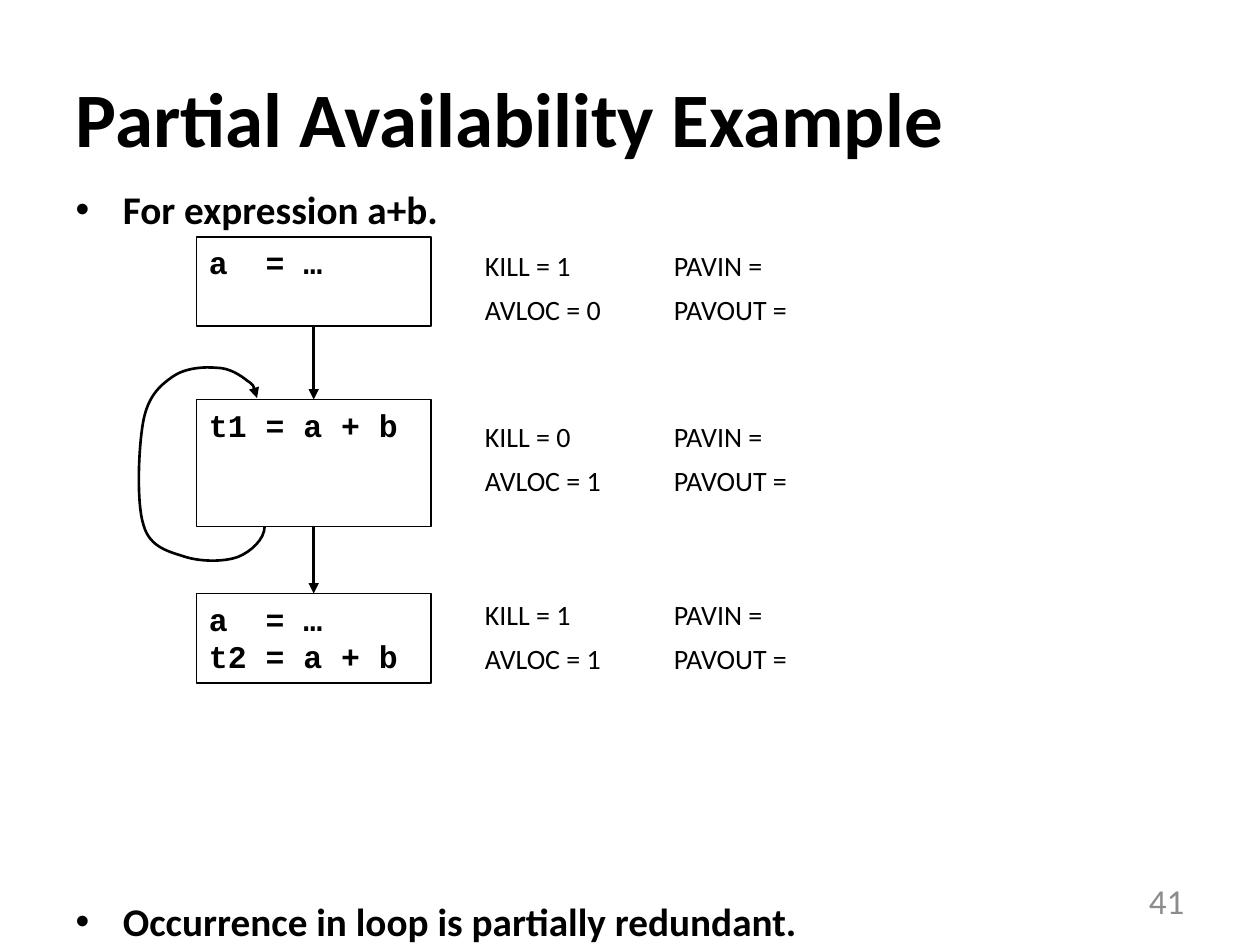
from lxml.etree import SubElement
from pptx import Presentation
from pptx.dml.color import RGBColor
from pptx.enum.shapes import MSO_CONNECTOR, MSO_SHAPE
from pptx.enum.text import MSO_ANCHOR, MSO_AUTO_SIZE, PP_ALIGN
from pptx.oxml.ns import qn
from pptx.util import Inches, Pt

BLACK, GREY = RGBColor(0, 0, 0), RGBColor(0x8C, 0x8C, 0x8C)
THEME = {
    "title": {"name": "Calibri", "size": Pt(44), "bold": True, "color": BLACK},
    "body": {"name": "Calibri", "size": Pt(22.4), "bold": True, "color": BLACK},
    "code": {"name": "Courier New", "size": Pt(18), "bold": True, "color": BLACK},
    "note": {"name": "Calibri", "size": Pt(16), "bold": False, "color": BLACK},
    "number": {"name": "Calibri", "size": Pt(20), "bold": False, "color": GREY},
}
BOX_LINE, ARROW_LINE = Pt(1), Pt(1.5)

deck = Presentation()
deck.slide_width, deck.slide_height = Inches(10), Inches(7.5)
page = deck.slides.add_slide(deck.slide_layouts[1])


def place(*shares):
    """Turn alternating x and y percentages of the slide into lengths."""
    sides = (deck.slide_width, deck.slide_height)
    return [int(sides[i % 2] * share / 100) for i, share in enumerate(shares)]


def write(box, lines, style, wrap=True, anchor=MSO_ANCHOR.TOP, **layout):
    """Fill a shape with one paragraph per line in a theme style."""
    frame = box.text_frame
    frame.auto_size = MSO_AUTO_SIZE.NONE
    frame.word_wrap, frame.vertical_anchor = wrap, anchor
    frame.text = "\n".join(lines)
    for para in frame.paragraphs:
        for name, value in {"alignment": PP_ALIGN.LEFT, **layout}.items():
            setattr(para, name, value)
        for span in para.runs:
            for name, value in THEME[style].items():
                if name == "color":
                    span.font.color.rgb = value
                else:
                    setattr(span.font, name, value)


# Title, bullets and page number
title, body = page.shapes.title, page.placeholders[1]
number = page.shapes.add_textbox(*place(71.7, 92.67, 23.3, 5.33))
for holder, area in ((title, (5, 4, 90, 16.67)), (body, (5, 18.93, 90.8, 70.4))):
    holder.left, holder.top, holder.width, holder.height = place(*area)
write(title, ["Partial Availability Example"], "title", anchor=MSO_ANCHOR.MIDDLE)
write(body, ["For expression a+b.", "Occurrence in loop is partially redundant."], "body")
body.text_frame.paragraphs[1].space_before = Pt(380)  # room for the flow graph
write(number, ["41"], "number", anchor=MSO_ANCHOR.MIDDLE, alignment=PP_ALIGN.RIGHT)

# Basic blocks: box top and height, code, top of the notes, KILL, AVLOC
BLOCKS = [
    (25.07, 9.47, ["a  = …"], 25.6, 1, 0),
    (42.27, 13.47, ["t1 = a + b"], 43.73, 0, 1),
    (62.8, 9.47, ["a  = …", "t2 = a + b"], 62.53, 1, 1),
]
boxes = []
for top, height, code, note_top, kill, avloc in BLOCKS:
    box = page.shapes.add_shape(MSO_SHAPE.RECTANGLE, *place(15.6, top, 18.6, height))
    box.shadow.inherit = False
    box.fill.background()
    box.line.color.rgb, box.line.width = BLACK, BOX_LINE
    write(box, code, "code")
    boxes.append(box)
    notes = ([f"KILL = {kill}", f"AVLOC = {avloc}"], ["PAVIN =", "PAVOUT ="])
    for left, lines in zip((37.5, 52.5), notes):
        note = page.shapes.add_textbox(*place(left, note_top, 11.5, 9.6))
        write(note, lines, "note", wrap=False, space_before=Pt(6))

# Arrows from each block to the next
arrows = []
for upper, lower in zip(boxes, boxes[1:]):
    arrow = page.shapes.add_connector(MSO_CONNECTOR.STRAIGHT, 0, 0, 0, 0)
    arrow.begin_connect(upper, 2)
    arrow.end_connect(lower, 0)
    SubElement(arrow._element.spPr, qn("a:effectLst"))
    arrows.append(arrow)

# Loop back to the middle block: a start, then three points per Bezier curve
LOOP = [
    (21, 55.73),
    (21, 57.07), (19.9, 58.4), (18.9, 58.93),
    (17.8, 59.47), (16, 59.47), (14.7, 58.93),
    (13.5, 58.4), (11.9, 58), (11.4, 55.6),
    (10.8, 53.2), (11, 47.07), (11.4, 44.4),
    (11.8, 41.87), (12.7, 40.8), (13.7, 39.87),
    (14.7, 38.93), (16.2, 38.8), (17.2, 38.93),
    (18.2, 38.93), (19.1, 39.73), (19.6, 40.27),
    (20.2, 40.8), (20.3, 41.47), (20.4, 42.13),
]
points = [place(*point) for point in LOOP]
builder = page.shapes.build_freeform(*points[0])
builder.add_line_segments(points[1:], close=False)
loop = builder.convert_to_shape()
loop.shadow.inherit = False
loop.fill.background()
outline = next(loop._element.iter(qn("a:path")))
segments = outline.findall(qn("a:lnTo"))
for first in range(0, len(segments), 3):
    curve = SubElement(outline, qn("a:cubicBezTo"))
    for segment in segments[first:first + 3]:
        curve.append(segment[0])
        outline.remove(segment)
arrows.append(loop)

for arrow in arrows:
    arrow.line.color.rgb, arrow.line.width = BLACK, ARROW_LINE
    SubElement(arrow.line._get_or_add_ln(), qn("a:tailEnd"), type="triangle")

deck.save("out.pptx")
